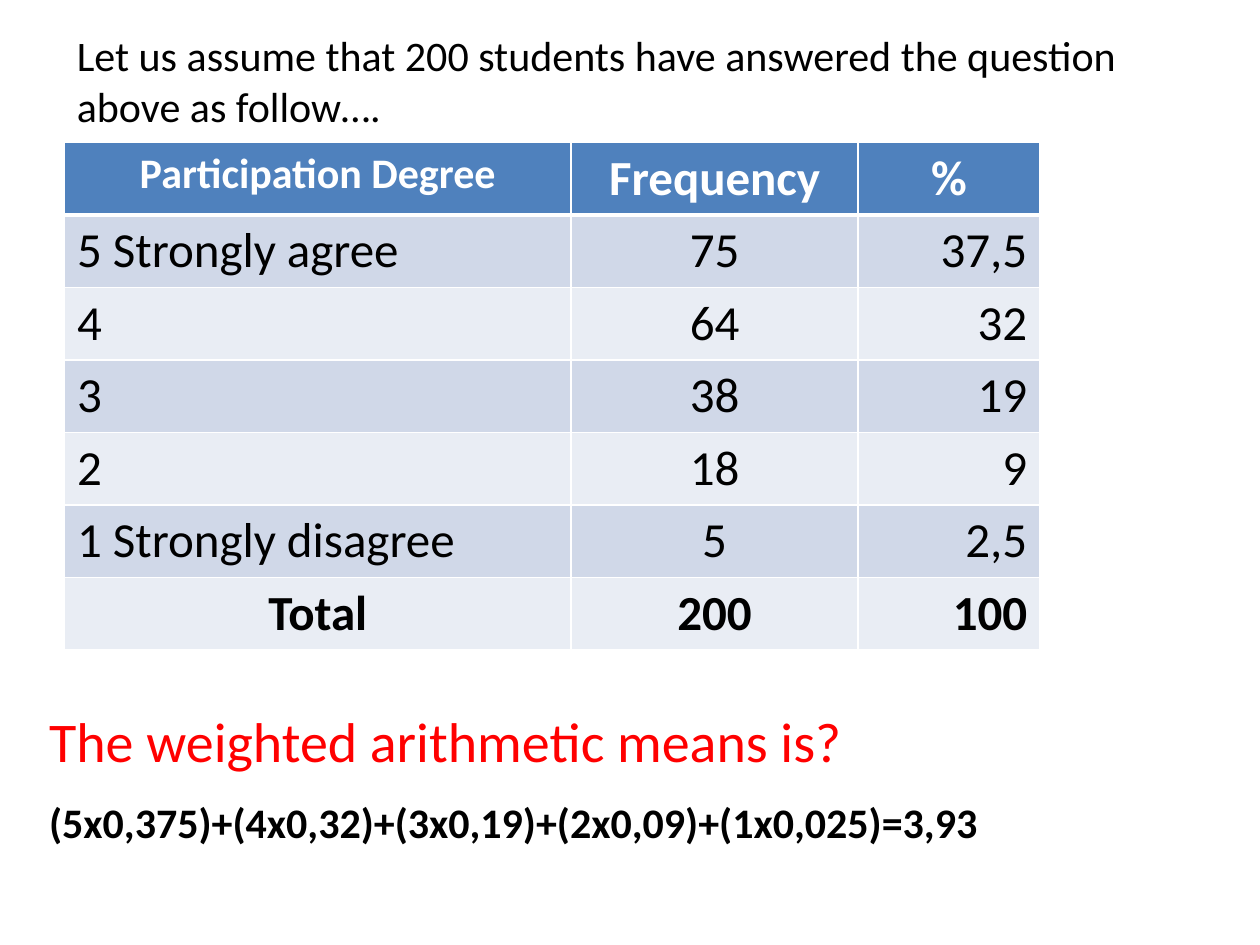
import lxml.etree
import pptx
import pptx.dml.color
import pptx.enum.text
import pptx.oxml.ns
import pptx.util

Cm, Pt = pptx.util.Cm, pptx.util.Pt
RGB = pptx.dml.color.RGBColor.from_string
ALIGN = pptx.enum.text.PP_ALIGN
LEFT, CENTER, RIGHT = ALIGN.LEFT, ALIGN.CENTER, ALIGN.RIGHT

# Content
INTRO = "Let us assume that 200 students have answered the question above as follow…."
QUESTION = "The weighted arithmetic means is?"
ANSWER = "(5x0,375)+(4x0,32)+(3x0,19)+(2x0,09)+(1x0,025)=3,93"
ROWS = [
    ("Participation Degree", "Frequency", "%"),
    ("5 Strongly agree", "75", "37,5"),
    ("4", "64", "32"),
    ("3", "38", "19"),
    ("2", "18", "9"),
    ("1 Strongly disagree", "5", "2,5"),
    ("Total", "200", "100"),
]

# Colours and type sizes
THEME = {
    "font": "Calibri",
    "text": "000000", "white": "FFFFFF", "accent": "FF0000",
    "header": "4F81BD", "bands": ("E9EDF4", "D0D8E8"),
    "body": 24, "cell": 28, "question": 32,
    "rule": 1, "header_rule": 3,
}

# Text boxes: text, (left, top, width, height) in cm, size, colour, bold
TEXTS = [
    (INTRO, (1.3, 0.48, 22.6, 2.31), THEME["body"], THEME["text"], False),
    (QUESTION, (0.74, 14.12, 19.8, 1.63), THEME["question"], THEME["accent"], False),
    (ANSWER, (0.74, 15.93, 24.4, 1.27), THEME["body"], THEME["text"], True),
]
TABLE_LEFT, TABLE_TOP = 1.3, 2.87
COL_WIDTHS = (10.21, 5.79, 3.66)
ROW_HEIGHT = 1.44


def write(tf, text, size, color, bold, align=LEFT):
    p = tf.paragraphs[0]
    p.alignment = align
    r = p.add_run()
    r.text = text
    for name, value in {"name": THEME["font"], "size": Pt(size), "bold": bold}.items():
        setattr(r.font, name, value)
    r.font.color.rgb = RGB(color)


def add_borders(cell, widths):
    """Draw white rules; widths maps a side to points, in schema order."""
    tcPr = cell._tc.get_or_add_tcPr()
    qn = pptx.oxml.ns.qn
    for side, width in widths.items():
        ln = lxml.etree.SubElement(tcPr, qn("a:ln" + side), w=str(Pt(width)))
        fill = lxml.etree.SubElement(ln, qn("a:solidFill"))
        lxml.etree.SubElement(fill, qn("a:srgbClr"), val=THEME["white"])


def add_frequency_table(slide):
    sp = slide.shapes.add_table(
        len(ROWS), len(COL_WIDTHS), Cm(TABLE_LEFT), Cm(TABLE_TOP),
        Cm(sum(COL_WIDTHS)), Cm(ROW_HEIGHT * len(ROWS)))
    table = sp.table
    for column, width in zip(table.columns, COL_WIDTHS):
        column.width = Cm(width)
    thin, thick = THEME["rule"], THEME["header_rule"]
    for i, row in enumerate(ROWS):
        table.rows[i].height = Cm(ROW_HEIGHT)
        header, total = i == 0, i == len(ROWS) - 1
        for j, text in enumerate(row):
            cell = table.cell(i, j)
            add_borders(cell, {"L": thin, "R": thin,
                               "T": thick if i == 1 else thin,
                               "B": thick if header else thin})
            cell.fill.solid()
            cell.fill.fore_color.rgb = RGB(
                THEME["header"] if header else THEME["bands"][i % 2])
            align = (CENTER if header or (total and j == 0)
                     else (LEFT, CENTER, RIGHT)[j])
            write(cell.text_frame, text,
                  THEME["body"] if header and j == 0 else THEME["cell"],
                  THEME["white"] if header else THEME["text"],
                  header or total, align)


def main():
    prs = pptx.Presentation()
    prs.slide_width, prs.slide_height = Cm(25.4), Cm(19.05)
    slide = prs.slides.add_slide(prs.slide_layouts[6])

    # Frequency table
    add_frequency_table(slide)

    # Introduction, question and answer
    for text, box, size, color, bold in TEXTS:
        tf = slide.shapes.add_textbox(*map(Cm, box)).text_frame
        tf.word_wrap = True
        write(tf, text, size, color, bold)

    prs.save("out.pptx")


if __name__ == "__main__":
    main()
